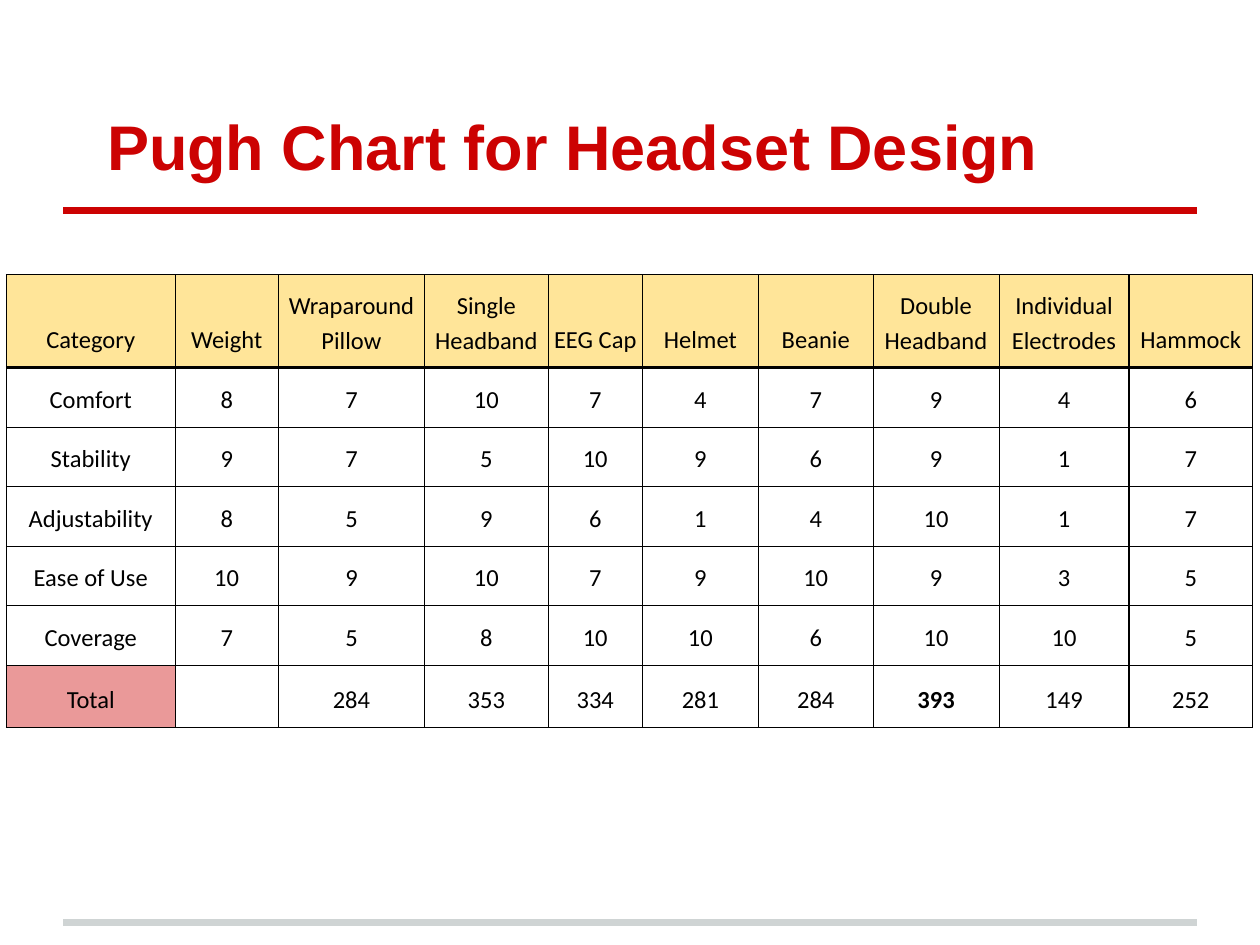
import pptx
import pptx.dml.color
import pptx.enum.shapes
import pptx.enum.text
import pptx.oxml.xmlchemy
import pptx.util
import lxml.etree
from pptx.util import Cm

HUES = {"red": "CC0202", "grey": "CFD4D4", "ink": "000000",
        "head": "FFE599", "white": "FFFFFF", "total": "EA9999"}
NS = "{http://schemas.openxmlformats.org/drawingml/2006/main}"
ALIGN = pptx.enum.text.PP_ALIGN
BOTTOM = pptx.enum.text.MSO_ANCHOR.BOTTOM

WIDTHS = [3.4, 2.08, 2.95, 2.49, 1.9, 2.34, 2.31, 2.54, 2.62, 2.49]
HEIGHTS = [1.87] + [1.2] * 6
ROWS = [
    ["Category", "Weight", "Wraparound Pillow", "Single Headband", "EEG Cap",
     "Helmet", "Beanie", "Double Headband", "Individual Electrodes", "Hammock"],
    ["Comfort", 8, 7, 10, 7, 4, 7, 9, 4, 6],
    ["Stability", 9, 7, 5, 10, 9, 6, 9, 1, 7],
    ["Adjustability", 8, 5, 9, 6, 1, 4, 10, 1, 7],
    ["Ease of Use", 10, 9, 10, 7, 9, 10, 9, 3, 5],
    ["Coverage", 7, 5, 8, 10, 10, 6, 10, 10, 5],
    ["Total", "", 284, 353, 334, 281, 284, 393, 149, 252],
]


def color(name):
    return pptx.dml.color.RGBColor.from_string(HUES[name])


def write(frame, text, font="Calibri", size=14, hue="ink", bold=False,
          align=ALIGN.LEFT, space=1.0, indent=0):
    para = frame.paragraphs[0]
    para.alignment = align
    para.line_spacing = space
    if indent:
        para._p.get_or_add_pPr().set("indent", str(Cm(indent)))
    run = para.add_run()
    run.text = text
    run.font.name = font
    run.font.size = pptx.util.Pt(size)
    run.font.bold = bold
    run.font.color.rgb = color(hue)


class Deck:
    def __init__(self):
        self.file = pptx.Presentation()
        self.file.slide_width = Cm(25.4)
        self.file.slide_height = Cm(19.05)
        self.slide = self.file.slides.add_slide(self.file.slide_layouts[6])

    def rule(self, top, hue):
        line = self.slide.shapes.add_connector(
            pptx.enum.shapes.MSO_CONNECTOR.STRAIGHT,
            Cm(1.27), Cm(top), Cm(24.13), Cm(top))
        line.line.color.rgb = color(hue)
        line.line.width = pptx.util.Pt(4)
        lxml.etree.SubElement(line._element.spPr, NS + "effectLst")

    def title(self, text):
        box = self.slide.shapes.add_textbox(Cm(1.27), Cm(0.76), Cm(22.86), Cm(3.18))
        frame = box.text_frame
        frame.word_wrap = True
        frame.vertical_anchor = BOTTOM
        frame.margin_left = frame.margin_right = Cm(0.25)
        frame.margin_top = frame.margin_bottom = Cm(0.25)
        write(frame, text, font="Arial", size=36, hue="red", bold=True, indent=0.64)

    def edge(self, cell, side, width):
        props = cell._tc.get_or_add_tcPr()
        line = lxml.etree.SubElement(props, NS + "ln" + side, w=str(pptx.util.Pt(width)))
        fill = lxml.etree.SubElement(line, NS + "solidFill")
        lxml.etree.SubElement(fill, NS + "srgbClr", val=HUES["ink"])

    def cell(self, cell, text, fill, bold, top, base):
        for side, width in (("L", 0.75), ("R", 0.75), ("T", top), ("B", base)):
            self.edge(cell, side, width)
        if fill:
            cell.fill.solid()
            cell.fill.fore_color.rgb = color(fill)
        else:
            cell.fill.background()
        cell.vertical_anchor = BOTTOM
        cell.margin_left = cell.margin_right = Cm(0.08)
        cell.margin_top = cell.margin_bottom = Cm(0.25)
        write(cell.text_frame, text, bold=bold, align=ALIGN.CENTER, space=1.15)

    def table(self, rows):
        grid = self.slide.shapes.add_table(
            len(rows), len(WIDTHS), Cm(0.13), Cm(5.54),
            Cm(sum(WIDTHS)), Cm(sum(HEIGHTS))).table
        grid.first_row = grid.horz_banding = False
        for col, width in zip(grid.columns, WIDTHS):
            col.width = Cm(width)
        for row, height in zip(grid.rows, HEIGHTS):
            row.height = Cm(height)
        best = max(rows[-1][2:])
        for r, row in enumerate(rows):
            for c, value in enumerate(row):
                fill = None
                if r == 0:
                    fill = "head"
                elif c == 0:
                    fill = "total" if row is rows[-1] else "white"
                self.cell(grid.cell(r, c), str(value), fill, value == best,
                          1.5 if r == 1 else 0.75, 1.5 if r == 0 else 0.75)


def main():
    deck = Deck()
    deck.rule(18.59, "grey")
    deck.rule(4.24, "red")
    deck.title("Pugh Chart for Headset Design")
    deck.table(ROWS)
    deck.file.save("out.pptx")


if __name__ == "__main__":
    main()
